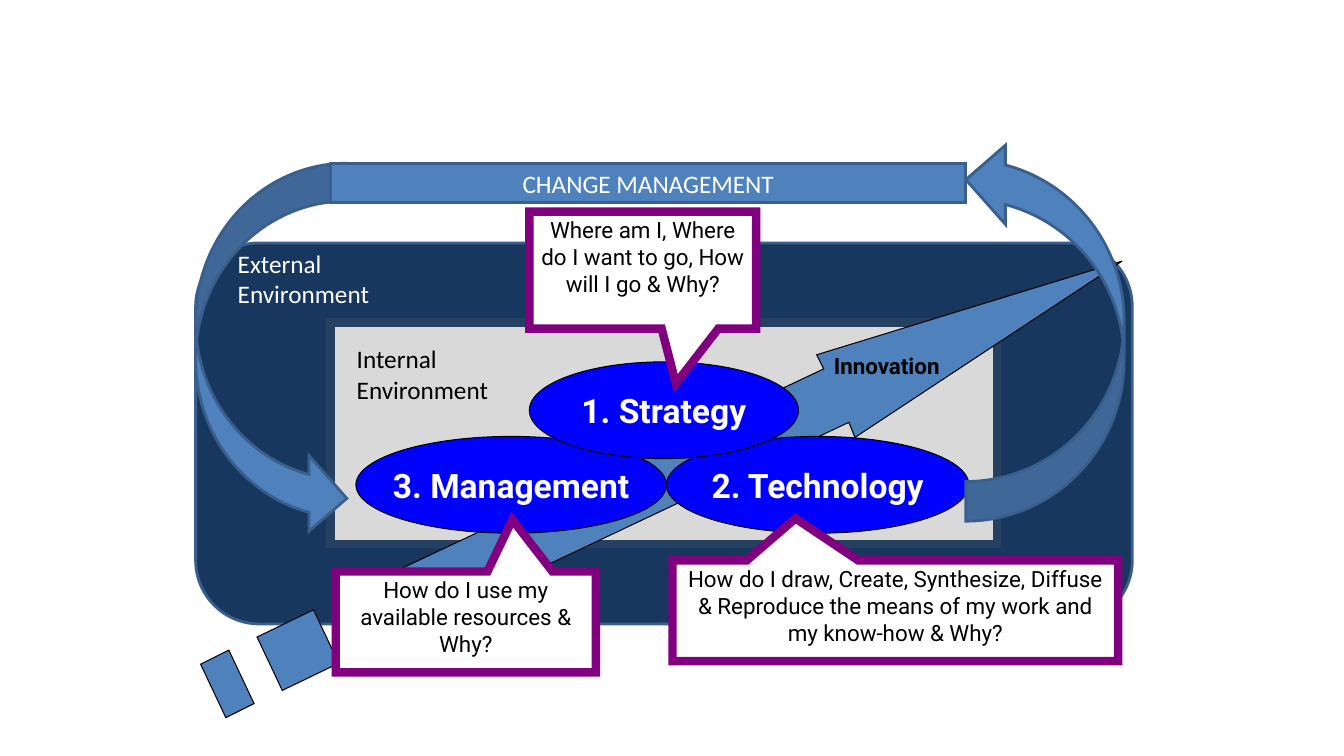
from lxml import etree
from pptx import Presentation, util as u
from pptx.dml.color import RGBColor
from pptx.enum import shapes, text
from pptx.oxml import ns

# Content: boxes are (left, top, width, height), all on an inch grid
KIND = shapes.MSO_SHAPE
BLUE, STEEL, PLUM = "4F81BD", "3A5F8C", "800080"
BLACK, WHITE = "000000", "FFFFFF"

FRAMES = [
    (KIND.ROUNDED_RECTANGLE, (1.94, 2.41, 9.29, 3.78), "17375E", STEEL, 2),
    (KIND.RECTANGLE, (3.28, 3.2, 6.61, 2.2), "D9D9D9", "254061", 6),
]
ARROW = [
    [(8.1, 3.52), (8.17, 3.66), (3.39, 5.92), (3.64, 6.45),
     (8.42, 4.19), (8.48, 4.34), (11.13, 2.59)],
    [(2.55, 6.32), (2.8, 6.85), (3.36, 6.58), (3.11, 6.05)],
    [(1.99, 6.59), (2.24, 7.12), (2.52, 6.98), (2.27, 6.45)],
]
OVALS = [
    ("2. Technology", (6.61, 4.33, 3, 0.96)),
    ("3. Management", (3.53, 4.33, 3.08, 0.96)),
    ("1. Strategy", (5.25, 3.59, 2.67, 0.96)),
]
CALLS = [
    ("Where am I, Where do I want to go, How will I go & Why?",
     (5.25, 2.1, 2.25, 1.16), (0.146, 0.97)),
    ("How do I use my available resources & Why?",
     (3.33, 5.67, 2.58, 1), (0.179, -1.014)),
    ("How do I draw, Create, Synthesize, Diffuse & Reproduce the means "
     "of my work and my know-how & Why?",
     (6.67, 5.56, 4.42, 1), (-0.224, -0.917)),
]
LABELS = [
    ("Internal Environment", (3.44, 3.36, 1.57, 0.71), BLACK),
    ("External Environment", (2.26, 2.41, 1.97, 0.71), WHITE),
]
CURVES = [((1.94, 1.62, 1.5, 3.7), False), ((9.58, 1.39, 1.57, 3.78), True)]
BANNER = ("CHANGE MANAGEMENT", (3.28, 1.62, 6.3, 0.39))


# Helpers
def inch(n):
    return u.Cm(n * 2.54)


def color(fmt, code):
    fmt.rgb = RGBColor.from_string(code)


def paint(shape, fill, line, width):
    shape.shadow.inherit = False
    shape.fill.solid()
    color(shape.fill.fore_color, fill)
    color(shape.line.color, line)
    shape.line.width = u.Pt(width)
    edge = shape.element.spPr.find(ns.qn("a:ln"))
    etree.SubElement(edge, ns.qn("a:miter")).set("lim", "800000")
    return shape


def draw(kind, box, fill, line, width):
    return paint(slide.shapes.add_shape(kind, *map(inch, box)), fill, line, width)


def write(shape, words, size=18, font="Calibri", ink=BLACK, bold=False,
          align="CENTER", anchor="TOP", wrap=True, grow=False):
    frame = shape.text_frame
    frame.word_wrap = wrap
    frame.vertical_anchor = text.MSO_ANCHOR[anchor]
    if grow:
        frame.auto_size = text.MSO_AUTO_SIZE.SHAPE_TO_FIT_TEXT
    para = frame.paragraphs[0]
    para.alignment = text.PP_ALIGN[align]
    run = para.add_run()
    run.text = words
    run.font.name, run.font.size, run.font.bold = font, u.Pt(size), bold
    color(run.font.color, ink)


def label(words, box, **look):
    write(slide.shapes.add_textbox(*map(inch, box)), words, grow=True, **look)


deck = Presentation()
deck.slide_width, deck.slide_height = inch(13.33), inch(7.5)
slide = deck.slides.add_slide(deck.slide_layouts[6])

# Environments
for frame in FRAMES:
    draw(*frame)

# Striped innovation arrow
parts = [[(inch(x), inch(y)) for x, y in part] for part in ARROW]
pen = slide.shapes.build_freeform(*parts[0][0])
for i, part in enumerate(parts):
    if i:
        pen.move_to(*part[0])
    pen.add_line_segments(part[1:], close=True)
paint(pen.convert_to_shape(), BLUE, BLACK, 0.75)

# Three core themes
for words, box in OVALS:
    oval = draw(KIND.OVAL, box, "0000FF", BLACK, 0.75)
    write(oval, words, size=24, font="Roboto", ink=WHITE, bold=True,
          anchor="MIDDLE", wrap=False)
label("Innovation", (7.85, 3.44, 1.89, 0.37), size=16, font="Roboto", bold=True)

# Questions
for words, box, tip in CALLS:
    call = draw(KIND.RECTANGULAR_CALLOUT, box, WHITE, PLUM, 6)
    call.adjustments[0], call.adjustments[1] = tip
    write(call, words, size=16, font="Roboto")

for words, box, ink in LABELS:
    label(words, box, ink=ink, align="LEFT")

# Change management loop
for box, flip in CURVES:
    curve = draw(KIND.CURVED_RIGHT_ARROW, box, BLUE, STEEL, 2)
    if flip:
        form = curve.element.spPr.find(ns.qn("a:xfrm"))
        form.set("flipH", "1")
        form.set("flipV", "1")
words, box = BANNER
write(draw(KIND.RECTANGLE, box, BLUE, STEEL, 2), words, ink=WHITE, anchor="MIDDLE")

deck.save("out.pptx")
